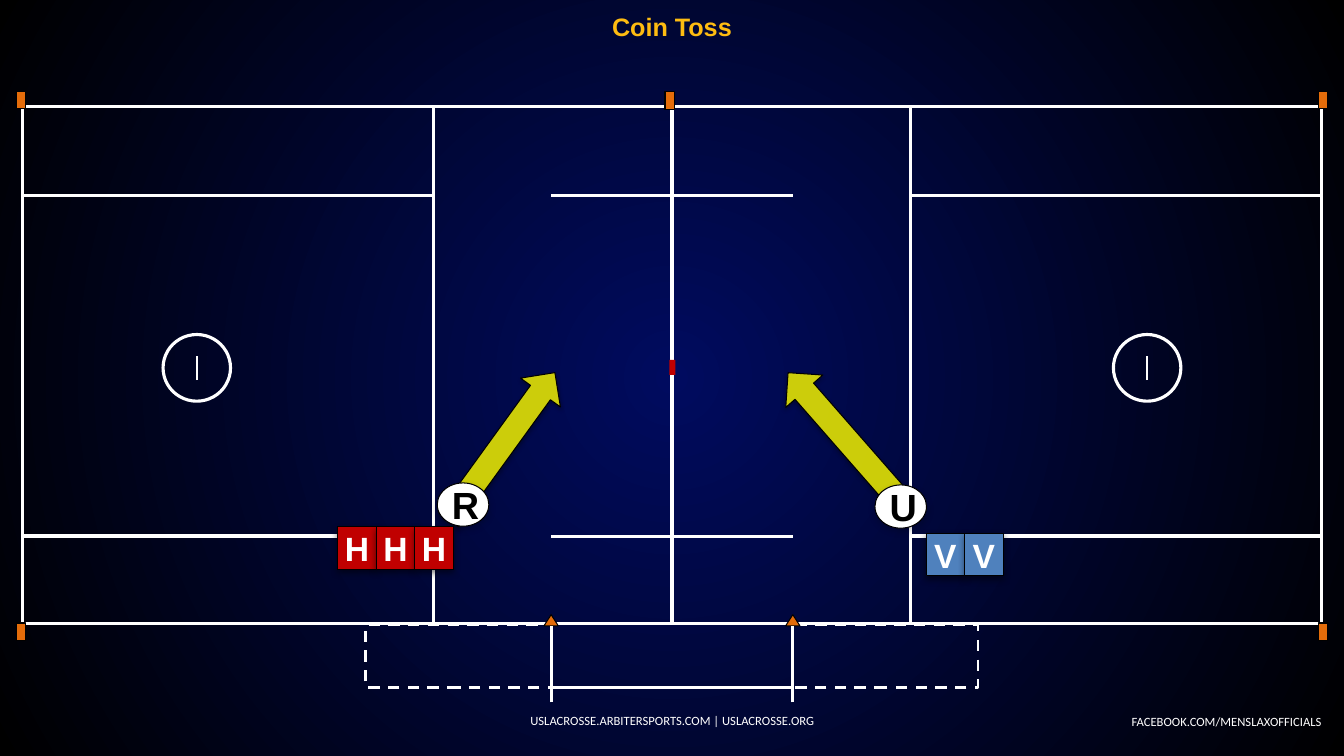
from lxml.etree import SubElement
from pptx import Presentation
from pptx.dml.color import RGBColor
from pptx.enum.dml import MSO_LINE
from pptx.enum.shapes import MSO_CONNECTOR, MSO_SHAPE
from pptx.enum.text import MSO_ANCHOR, PP_ALIGN
from pptx.oxml.ns import qn
from pptx.util import Cm, Pt

WHITE = RGBColor(0xFF, 0xFF, 0xFF)
BLACK = RGBColor(0x00, 0x00, 0x00)
NAVY = RGBColor(0x00, 0x0B, 0x5F)
ORANGE = RGBColor(0xE4, 0x6C, 0x0A)
RED = RGBColor(0xC0, 0x00, 0x00)
BLUE = RGBColor(0x4F, 0x81, 0xBD)
YELLOW = RGBColor(0xFF, 0xFF, 0x00)
GOLD = RGBColor(0xFE, 0xBC, 0x11)

# Content, all lengths in centimetres
SLIDE_WIDTH, SLIDE_HEIGHT = 33.87, 19.05
MIDLINE = SLIDE_WIDTH / 2
TEXTS = [  # text, box, size, font, bold, colour, alignment, wrap
    ("Coin Toss", (0, 0.13, SLIDE_WIDTH, 1.07), 18, "Arial", True, GOLD, PP_ALIGN.CENTER, True),
    ("USLACROSSE.ARBITERSPORTS.COM | USLACROSSE.ORG", (11.58, 17.65, 10.72, 1.02),
     9, "Calibri", False, WHITE, PP_ALIGN.CENTER, True),
    ("FACEBOOK.COM/MENSLAXOFFICIALS", (28.17, 17.86, 5.38, 0.64),
     9, "Calibri", False, WHITE, PP_ALIGN.RIGHT, False),
]
ARROWS = [((10.36, 10.62, 4.57, 1.24), 305.9), ((19.08, 10.49, 4.57, 1.24), 228.8)]
OFFICIALS = [("R", 11.02, 12.17), ("U", 22.05, 12.22)]
TEAMS = [("V", 2, 23.34, 13.44, BLUE), ("H", 3, 8.51, 13.28, RED)]
PLAYER_WIDTH, PLAYER_HEIGHT = 0.97, 1.07

# Field geometry for the left half; the right half is its mirror image
FIELD_LEFT, ATTACK_RIGHT = 0.56, 10.92
TOP, UPPER_ALLEY, LOWER_ALLEY, BOTTOM = 2.69, 4.93, 13.51, 15.72
BENCH_X, BENCH_TOP, BENCH_BOTTOM = 13.89, 15.75, 17.32
ATTACK_WIDTH = ATTACK_RIGHT - FIELD_LEFT
FIELD_BOXES = [
    (ATTACK_RIGHT, TOP, MIDLINE - ATTACK_RIGHT, BOTTOM - TOP),
    (FIELD_LEFT, TOP, ATTACK_WIDTH, UPPER_ALLEY - TOP),
    (FIELD_LEFT, LOWER_ALLEY, ATTACK_WIDTH, BOTTOM - LOWER_ALLEY),
    (FIELD_LEFT, UPPER_ALLEY, ATTACK_WIDTH, LOWER_ALLEY - UPPER_ALLEY),
]
PYLONS = [(0.42, 2.31, 0.23, 0.43), (0.42, 15.7, 0.23, 0.43)]
COACH_BOX = (9.22, BENCH_TOP, BENCH_X - 9.22, BENCH_BOTTOM - BENCH_TOP)
CREASE = (4.11, 8.43, 1.7, 1.68)
FIELD_LINES = [  # x1, y1, x2, y2, points
    (4.96, 9.58, 4.96, 8.97, 1.5),
    (BENCH_X, 17.7, BENCH_X, 15.77, 2.25),
    *[(MIDLINE, y, BENCH_X, y, 2.25) for y in (UPPER_ALLEY, LOWER_ALLEY, BENCH_BOTTOM)],
]
CONE = [(BENCH_X, 15.49), (BENCH_X + 0.18, 15.77), (BENCH_X - 0.18, 15.77)]


def paint(shape, fill=None, line=None, width=0.75):
    shape.shadow.inherit = False
    if fill is None:
        shape.fill.background()
    else:
        shape.fill.solid()
        shape.fill.fore_color.rgb = fill
    if line is None:
        shape.line.fill.background()
    else:
        shape.line.color.rgb = line
        shape.line.width = Pt(width)


def add_box(shapes, preset, box, **style):
    shape = shapes.add_shape(preset, *[Cm(value) for value in box])
    paint(shape, **style)
    return shape


def add_shadow(shape, opacity, blur, distance):
    effects = shape._element.spPr.find(qn("a:effectLst"))
    shadow = SubElement(effects, qn("a:outerShdw"), blurRad=str(Pt(blur)),
                        dist=str(Pt(distance)), dir="5400000", rotWithShape="0")
    color = SubElement(shadow, qn("a:srgbClr"), val="000000")
    SubElement(color, qn("a:alpha"), val=str(opacity * 1000))


def write(shape, text, size, font, bold, color, alignment=PP_ALIGN.CENTER, wrap=True):
    frame = shape.text_frame
    frame.text = text
    frame.word_wrap = wrap
    frame.vertical_anchor = MSO_ANCHOR.MIDDLE
    para = frame.paragraphs[0]
    para.alignment = alignment
    span = para.runs[0].font
    span.size, span.name, span.bold = Pt(size), font, bold
    span.color.rgb = color


def add_token(shapes, preset, box, letter, size, fill, color, inset, opacity):
    token = add_box(shapes, preset, box, fill=fill, line=BLACK)
    add_shadow(token, opacity, 5, 2)
    write(token, letter, size, "Arial", True, color)
    frame = token.text_frame
    frame.margin_left = frame.margin_right = Cm(inset)
    frame.margin_top = frame.margin_bottom = Cm(inset)


def add_field_half(page, mirrored):
    shapes = page.shapes.add_group_shape().shapes

    def across(x, width=0):
        return SLIDE_WIDTH - x - width if mirrored else x

    def half_box(preset, box, **style):
        x, y, width, height = box
        return add_box(shapes, preset, (across(x, width), y, width, height), **style)

    for box in FIELD_BOXES:
        half_box(MSO_SHAPE.RECTANGLE, box, line=WHITE, width=2.25)
    for box in PYLONS:
        half_box(MSO_SHAPE.RECTANGLE, box, fill=ORANGE, line=BLACK)
    coach_box = half_box(MSO_SHAPE.RECTANGLE, COACH_BOX, line=WHITE, width=2)
    coach_box.line.dash_style = MSO_LINE.DASH
    half_box(MSO_SHAPE.OVAL, CREASE, line=WHITE, width=2.25)

    points = [(Cm(across(x)), Cm(y)) for x, y in CONE]
    outline = shapes.build_freeform(*points[0])
    outline.add_line_segments(points[1:], close=True)
    paint(outline.convert_to_shape(), fill=ORANGE, line=BLACK)

    for x1, y1, x2, y2, width in FIELD_LINES:
        line = shapes.add_connector(MSO_CONNECTOR.STRAIGHT, Cm(across(x1)), Cm(y1),
                                    Cm(across(x2)), Cm(y2))
        line.line.color.rgb = WHITE
        line.line.width = Pt(width)
        SubElement(line._element.spPr, qn("a:effectLst"))


def set_background(page):
    fill = page.background.fill
    fill.gradient()
    for stop, color in zip(fill.gradient_stops, (NAVY, BLACK)):
        stop.color.rgb = color
    gradient = page._element.find(".//" + qn("a:gradFill"))
    gradient.remove(gradient.find(qn("a:lin")))
    circle = SubElement(gradient, qn("a:path"), path="circle")
    SubElement(circle, qn("a:fillToRect"), l="50000", t="50000", r="50000", b="50000")


def main():
    deck = Presentation()
    deck.slide_width, deck.slide_height = Cm(SLIDE_WIDTH), Cm(SLIDE_HEIGHT)
    page = deck.slides.add_slide(deck.slide_layouts[6])
    set_background(page)

    # Field
    for mirrored in (False, True):
        add_field_half(page, mirrored)
    add_box(page.shapes, MSO_SHAPE.RECTANGLE, (16.76, 2.31, 0.25, 0.46), fill=ORANGE, line=BLACK)
    add_box(page.shapes, MSO_SHAPE.RECTANGLE, (16.87, 9.07, 0.15, 0.38), fill=RED)

    # Title and footers
    for text, box, *style in TEXTS:
        write(page.shapes.add_textbox(*[Cm(value) for value in box]), text, *style)

    # Paths of the officials
    for box, angle in ARROWS:
        arrow = add_box(page.shapes, MSO_SHAPE.RIGHT_ARROW, box, fill=YELLOW, line=BLACK)
        arrow.rotation = angle
        color = arrow._element.spPr.find(qn("a:solidFill")).find(qn("a:srgbClr"))
        SubElement(color, qn("a:alpha"), val="80000")
        add_shadow(arrow, 35, 3.1, 1.8)

    # Officials and players
    for letter, x, y in OFFICIALS:
        add_token(page.shapes, MSO_SHAPE.OVAL, (x, y, 1.3, 1.09), letter, 27,
                  WHITE, BLACK, 0.18, 20)
    for letter, count, left, top, fill in TEAMS:
        team = page.shapes.add_group_shape()
        for index in range(count):
            box = (left + index * PLAYER_WIDTH, top, PLAYER_WIDTH, PLAYER_HEIGHT)
            add_token(team.shapes, MSO_SHAPE.RECTANGLE, box, letter, 24, fill, WHITE, 0.15, 50)

    deck.save("out.pptx")


if __name__ == "__main__":
    main()
